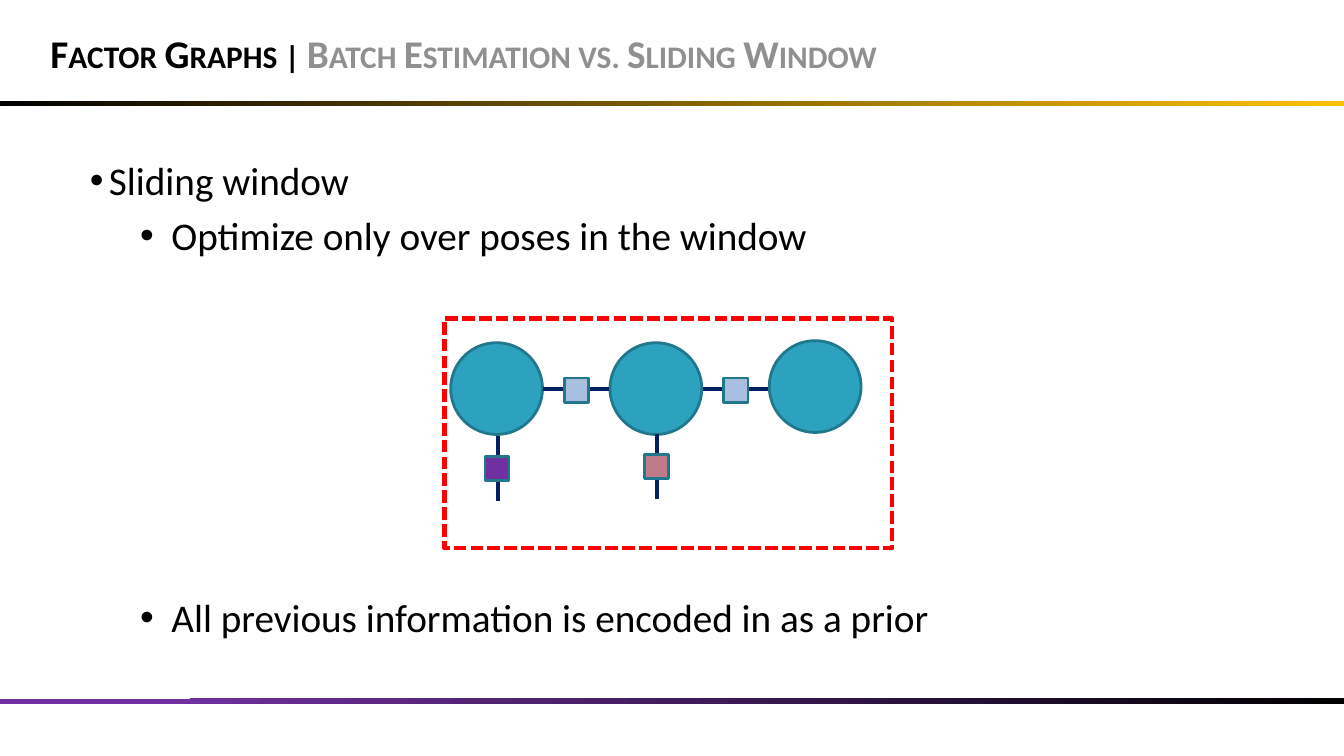
from dataclasses import dataclass

from lxml.etree import SubElement
from pptx import Presentation
from pptx.dml.color import RGBColor
from pptx.enum.dml import MSO_LINE
from pptx.enum.shapes import MSO_CONNECTOR, MSO_SHAPE
from pptx.enum.text import MSO_ANCHOR, MSO_AUTO_SIZE, PP_ALIGN
from pptx.oxml.ns import qn
from pptx.util import Inches, Pt


@dataclass(frozen=True)
class Theme:
    font: str = "Calibri"
    size: float = 28
    black: str = "000000"
    grey: str = "909090"
    gold: str = "FFC000"
    purple: str = "7030A0"
    red: str = "FF0000"
    pose: str = "2DA2BF"
    outline: str = "21788D"
    edge: str = "002060"
    odometry: str = "A8BFDF"
    landmark: str = "C07B8A"
    edge_width: float = 3
    outline_width: float = 2


@dataclass(frozen=True)
class Bar:
    top: float
    start: str
    end: str
    start_pos: float
    angle: float


@dataclass(frozen=True)
class Bullet:
    text: str
    level: int
    margin: float
    hanging: float
    before: float


@dataclass(frozen=True)
class Unary:
    pose: int
    top: float
    color: str


T = Theme()
BARS = [
    Bar(1, T.black, T.gold, 0, 0),
    Bar(6.93, T.purple, T.black, 0.13, 315),
]
BULLETS = [
    Bullet("Sliding window", 0, 0.19, 0.19, 0),
    Bullet("Optimize only over poses in the window", 1, 0.81, 0.31, 5.5),
    Bullet("All previous information is encoded in as a prior", 1, 0.81, 0.31, 239.5),
]
POSE_LEFT, POSE_PITCH, POSE_SIZE, FACTOR_SIZE = 4.47, 1.58, 0.91, 0.24
POSE_TOPS = [3.4, 3.4, 3.38]
UNARIES = [Unary(0, 4.33, T.purple), Unary(1, 4.31, T.landmark)]


def rgb(color: str) -> RGBColor:
    return RGBColor.from_string(color)


def place(sp, left: float, top: float, width: float, height: float) -> None:
    sp.left, sp.top = Inches(left), Inches(top)
    sp.width, sp.height = Inches(width), Inches(height)


def add_text(p, text: str, *, color: str = T.black, bold: bool = False,
             small_caps: bool = False) -> None:
    r = p.add_run()
    r.text = text
    r.font.name = T.font
    r.font.size = Pt(T.size)
    r.font.bold = bold
    r.font.color.rgb = rgb(color)
    if small_caps:
        r.font._element.set("cap", "small")


def add_bar(shapes, bar: Bar, width: float) -> None:
    sp = shapes.add_shape(MSO_SHAPE.RECTANGLE, 0, Inches(bar.top), Inches(width), Inches(0.05))
    sp.shadow.inherit = False
    sp.line.fill.background()
    sp.fill.gradient()
    sp.fill.gradient_angle = bar.angle
    first, last = sp.fill.gradient_stops
    first.color.rgb, first.position = rgb(bar.start), bar.start_pos
    last.color.rgb, last.position = rgb(bar.end), 1


def add_node(shapes, kind: MSO_SHAPE, left: float, top: float, size: float, color: str) -> None:
    sp = shapes.add_shape(kind, Inches(left), Inches(top), Inches(size), Inches(size))
    sp.shadow.inherit = False
    sp.fill.solid()
    sp.fill.fore_color.rgb = rgb(color)
    sp.line.color.rgb = rgb(T.outline)
    sp.line.width = Pt(T.outline_width)


def add_edge(shapes, x1: float, y1: float, x2: float, y2: float) -> None:
    cx = shapes.add_connector(MSO_CONNECTOR.STRAIGHT, Inches(x1), Inches(y1), Inches(x2), Inches(y2))
    cx.line.color.rgb = rgb(T.edge)
    cx.line.width = Pt(T.edge_width)
    SubElement(cx._element.spPr, qn("a:effectLst"))


def add_window(shapes) -> None:
    sp = shapes.add_shape(MSO_SHAPE.RECTANGLE, Inches(4.41), Inches(3.16), Inches(4.44), Inches(2.28))
    sp.shadow.inherit = False
    sp.fill.background()
    sp.line.color.rgb = rgb(T.red)
    sp.line.width = Pt(T.edge_width)
    sp.line.dash_style = MSO_LINE.SQUARE_DOT


def add_graph(shapes) -> None:
    add_window(shapes)
    lefts = [POSE_LEFT + i * POSE_PITCH for i in range(len(POSE_TOPS))]
    for left, top in zip(lefts, POSE_TOPS):
        add_node(shapes, MSO_SHAPE.OVAL, left, top, POSE_SIZE, T.pose)
    for left in lefts[:-1]:
        add_edge(shapes, left + 0.92, 3.86, left + 1.57, 3.86)
        add_node(shapes, MSO_SHAPE.RECTANGLE, left + 1.13, 3.75, FACTOR_SIZE, T.odometry)
    for unary in UNARIES:
        x = lefts[unary.pose] + 0.47
        add_edge(shapes, x, unary.top, x, unary.top + 0.64)
        add_node(shapes, MSO_SHAPE.RECTANGLE, x - 0.13, unary.top + 0.2, FACTOR_SIZE, unary.color)


def fill_title(sp) -> None:
    place(sp, 0.4, 0.05, 8.99, 0.94)
    tf = sp.text_frame
    tf.auto_size = MSO_AUTO_SIZE.NONE
    tf.vertical_anchor = MSO_ANCHOR.MIDDLE
    p = tf.paragraphs[0]
    p.alignment = PP_ALIGN.LEFT
    add_text(p, "Factor Graphs | ", bold=True, small_caps=True)
    add_text(p, "Batch Estimation vs. Sliding Window", color=T.grey, bold=True, small_caps=True)


def fill_body(sp) -> None:
    place(sp, 0.79, 1.5, 11.67, 4.67)
    tf = sp.text_frame
    tf.auto_size = MSO_AUTO_SIZE.NONE
    for i, bullet in enumerate(BULLETS):
        p = tf.add_paragraph() if i else tf.paragraphs[0]
        p.level = bullet.level
        p.space_before = Pt(bullet.before)
        pPr = p._p.get_or_add_pPr()
        pPr.set("marL", str(Inches(bullet.margin)))
        pPr.set("indent", str(-Inches(bullet.hanging)))
        SubElement(pPr, qn("a:buFont")).set("typeface", "Arial")
        SubElement(pPr, qn("a:buChar")).set("char", "•")
        add_text(p, bullet.text)


def main() -> None:
    prs = Presentation()
    prs.slide_width, prs.slide_height = Inches(13.33), Inches(7.5)
    s = prs.slides.add_slide(prs.slide_layouts[1])
    for bar in BARS:
        add_bar(s.shapes, bar, 13.33)
    fill_title(s.shapes.title)
    fill_body(s.placeholders[1])
    add_graph(s.shapes.add_group_shape().shapes)
    prs.save("out.pptx")


if __name__ == "__main__":
    main()
